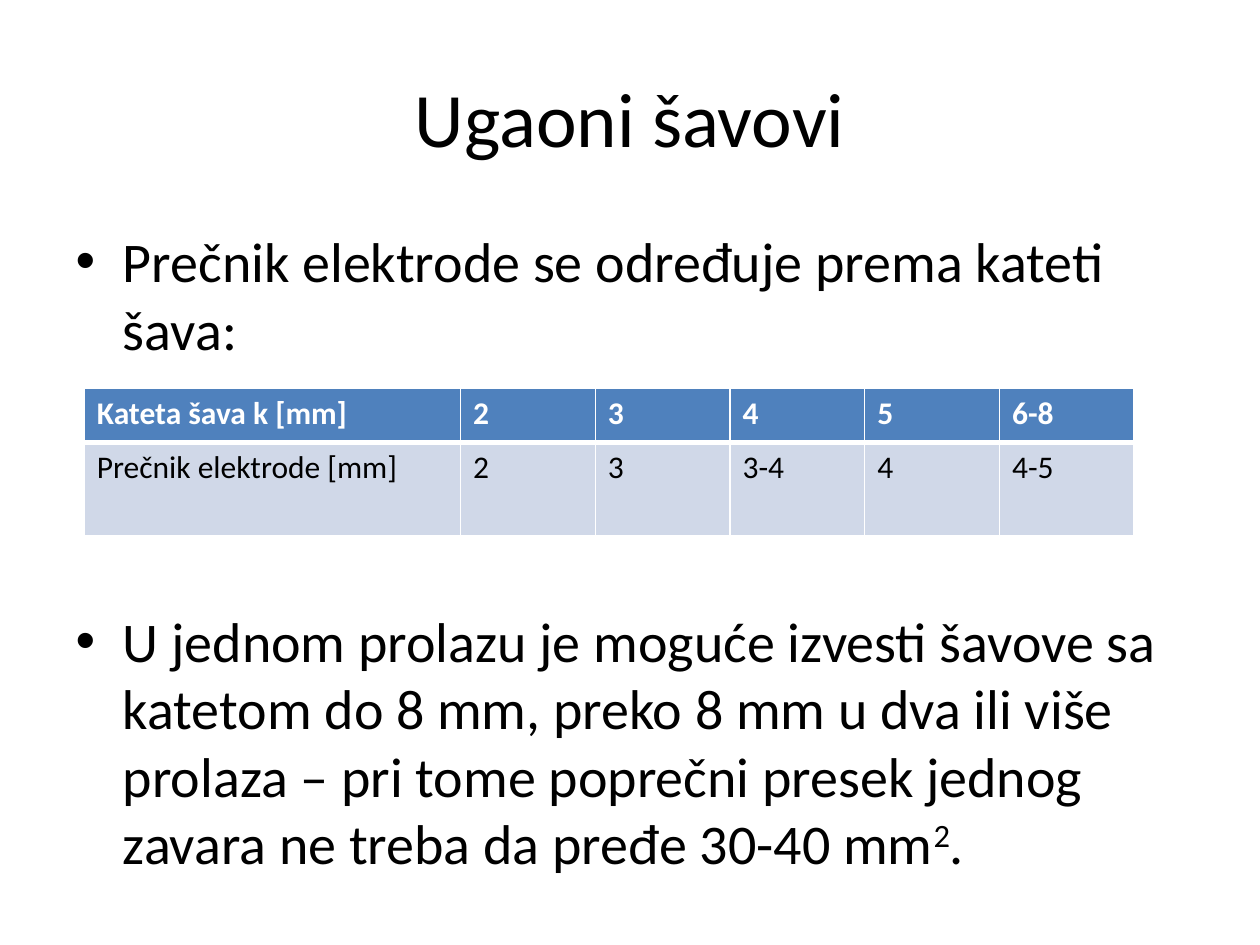
from lxml.etree import SubElement
from pptx import Presentation
from pptx.dml.color import RGBColor
from pptx.enum.text import MSO_ANCHOR, PP_ALIGN
from pptx.oxml.ns import qn
from pptx.util import Pt


def style(par, size, color, bold=False):
    for run in par.runs:
        run.font.name = "Calibri"
        run.font.size = Pt(size)
        run.font.bold = bold
        run.font.color.rgb = RGBColor.from_string(color)


def edge(cell, side, width):
    line = SubElement(cell._tc.get_or_add_tcPr(), qn(f"a:ln{side}"), w=str(Pt(width)))
    fill = SubElement(line, qn("a:solidFill"))
    SubElement(fill, qn("a:srgbClr"), val="FFFFFF")


prs = Presentation()
prs.slide_width, prs.slide_height = Pt(720), Pt(540)
slide = prs.slides.add_slide(prs.slide_layouts[1])
title, body = slide.placeholders

# Title
title.left, title.top, title.width, title.height = Pt(36), Pt(21.6), Pt(648), Pt(90)
title.text_frame.text = "Ugaoni šavovi"
title.text_frame.vertical_anchor = MSO_ANCHOR.MIDDLE
head = title.text_frame.paragraphs[0]
head.alignment = PP_ALIGN.CENTER
style(head, 44, "000000")

# Bullets, with room for the table between them
body.left, body.top, body.width, body.height = Pt(36), Pt(126), Pt(648), Pt(356.4)
frame = body.text_frame
frame.text = "Prečnik elektrode se određuje prema kateti šava:"
last = frame.add_paragraph()
last.text = (
    "U jednom prolazu je moguće izvesti šavove sa katetom do 8 mm, "
    "preko 8 mm u dva ili više prolaza – pri tome poprečni presek "
    "jednog zavara ne treba da pređe 30-40 mm"
)
last.space_before = Pt(140.3)
power = last.add_run()
power.text = "2"
power.font._element.set("baseline", "30000")
last.add_run().text = "."
for par in frame.paragraphs:
    style(par, 32, "000000")

# Table of electrode diameters
rows = [
    ["Kateta šava k [mm]", "2", "3", "4", "5", "6-8"],
    ["Prečnik elektrode [mm]", "2", "3", "3-4", "4", "4-5"],
]
looks = [("4F81BD", "FFFFFF", True), ("D0D8E8", "000000", False)]
edges = [{"L": 1, "R": 1, "T": 1, "B": 3}, {"L": 1, "R": 1, "T": 3, "B": 1}]
table = slide.shapes.add_table(2, 6, Pt(48.2), Pt(222), Pt(600), Pt(84)).table
for col, width in zip(table.columns, [215] + [77] * 5):
    col.width = Pt(width)
for row, height in zip(table.rows, [30.8, 53.2]):
    row.height = Pt(height)
for r, (texts, (fill, color, bold)) in enumerate(zip(rows, looks)):
    for c, text in enumerate(texts):
        cell = table.cell(r, c)
        cell.text_frame.text = text
        style(cell.text_frame.paragraphs[0], 18, color, bold)
        for side, width in edges[r].items():
            edge(cell, side, width)
        cell.fill.solid()
        cell.fill.fore_color.rgb = RGBColor.from_string(fill)

prs.save("out.pptx")
